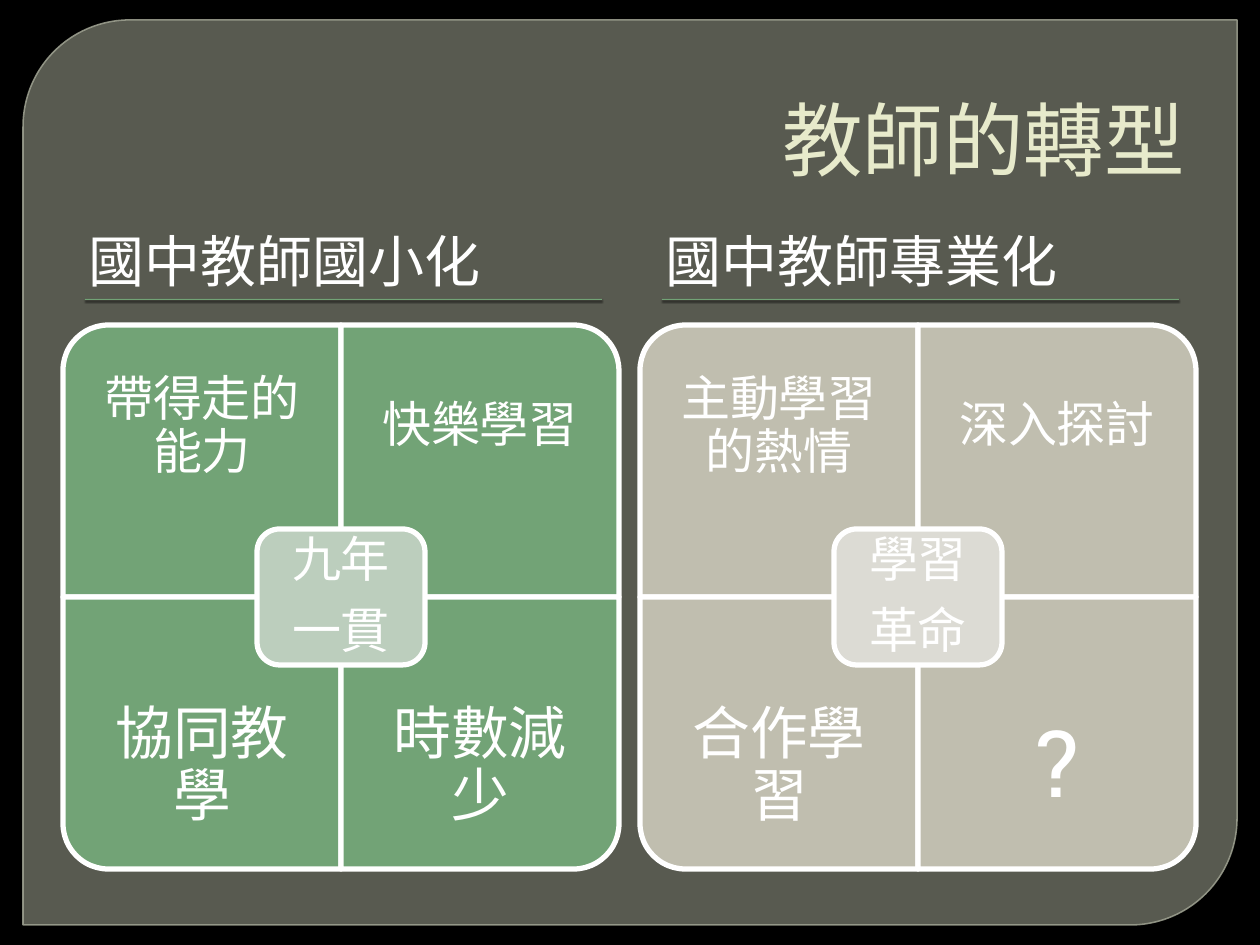
from lxml import etree
from pptx import Presentation
from pptx import util as u
from pptx.dml import color
from pptx.enum import shapes, text
from pptx.oxml import ns

SCALE = 914400 / 126
FONT = "Roboto Slab"
COLORS = {
    "back": "000000", "frame": "888B7B", "edge": "9DA090", "title": "E7EACB",
    "white": "FFFFFF", "green": "72A376", "pale_green": "BCCEBD",
    "sand": "C0BEAF", "pale_sand": "DCDBD4",
}
KIND = shapes.MSO_SHAPE
ALIGN = text.PP_ALIGN
ANCHOR = text.MSO_ANCHOR
CELL_W, CELL_H = 278, 272
HUB_W, HUB_H = 168, 136
LABEL_H = 204
TOP = 325


def px(length):
    return u.Emu(round(length * SCALE))


def rgb(name):
    return color.RGBColor.from_string(COLORS[name])


def set_alpha(fill, percent):
    tint = fill._xPr.find(".//" + ns.qn("a:srgbClr"))
    etree.SubElement(tint, ns.qn("a:alpha"), val=str(percent * 1000))


class SlideBuilder:
    def __init__(self, deck):
        self.slide = deck.slides.add_slide(deck.slide_layouts[6])
        self.slide.background.fill.solid()
        self.slide.background.fill.fore_color.rgb = rgb("back")
        self.target = self.slide.shapes

    def shape(self, kind, left, top, width, height, fill, line=None, points=3):
        item = self.target.add_shape(kind, px(left), px(top), px(width), px(height))
        item.shadow.inherit = False
        item.fill.solid()
        item.fill.fore_color.rgb = rgb(fill)
        if line:
            item.line.color.rgb = rgb(line)
            item.line.width = u.Pt(points)
        else:
            item.line.fill.background()
        return item

    def frame(self):
        item = self.shape(KIND.ROUND_2_DIAG_RECTANGLE, 23, 20, 1214, 905, "frame", "edge", 0.87)
        item.adjustments[0] = 0.118
        item.adjustments[1] = 0
        set_alpha(item.fill, 65)
        set_alpha(item.line.fill, 88)

    def rule(self, left, top, width):
        item = self.shape(KIND.RECTANGLE, left, top, width, 1, "green")
        effects = item._element.spPr.find(ns.qn("a:effectLst"))
        shadow = etree.SubElement(effects, ns.qn("a:outerShdw"), blurRad="12700",
                                  dist="12700", dir="5400000", rotWithShape="0")
        tint = etree.SubElement(shadow, ns.qn("a:srgbClr"), val=COLORS["back"])
        etree.SubElement(tint, ns.qn("a:alpha"), val="75000")

    def text(self, left, top, width, height, lines, size, fill="white", align=ALIGN.CENTER,
             anchor=ANCHOR.MIDDLE, inset=None, indent=0, spacing=None):
        box = self.target.add_textbox(px(left), px(top), px(width), px(height))
        frame = box.text_frame
        frame.word_wrap = True
        frame.vertical_anchor = anchor
        if inset is not None:
            frame.margin_left = frame.margin_right = px(inset)
            frame.margin_top = frame.margin_bottom = px(inset)
        for index, line in enumerate(lines):
            para = frame.add_paragraph() if index else frame.paragraphs[0]
            para.alignment = align
            if indent:
                para._p.get_or_add_pPr().set("marL", str(px(indent)))
            if spacing:
                para.line_spacing = spacing
                para.space_after = u.Pt(round(size * 0.35))
            span = para.add_run()
            span.text = line
            span.font.name = FONT
            span.font.size = u.Pt(size)
            span.font.color.rgb = rgb(fill)

    def label(self, left, top, width, height, lines, size, inset):
        self.text(left, top, width, height, lines, size, inset=inset, spacing=0.9)

    def matrix(self, left, fill, hub_fill, cells, hub_lines):
        self.target = self.slide.shapes.add_group_shape().shapes
        for index, (words, size, inset) in enumerate(cells):
            row, column = divmod(index, 2)
            x, y = left + column * CELL_W, TOP + row * CELL_H
            turn = (270, 0, 180, 90)[index]
            width, height = (CELL_H, CELL_W) if turn in (90, 270) else (CELL_W, CELL_H)
            cell = self.shape(KIND.ROUND_1_RECTANGLE, x + (CELL_W - width) // 2,
                              y + (CELL_H - height) // 2, width, height, fill, "white")
            cell.rotation = turn
            label_top = y + row * (CELL_H - LABEL_H)
            self.label(x, label_top, CELL_W, LABEL_H, [words], size, inset)
        x, y = left + CELL_W - HUB_W // 2, TOP + CELL_H - HUB_H // 2
        self.shape(KIND.ROUNDED_RECTANGLE, x, y, HUB_W, HUB_H, hub_fill, "white")
        self.label(x + 7, y + 7, HUB_W - 14, HUB_H - 14, hub_lines, 28, 15)
        self.target = self.slide.shapes


def main():
    deck = Presentation()
    deck.slide_width, deck.slide_height = px(1260), px(945)
    page = SlideBuilder(deck)
    page.frame()
    page.text(63, 35, 1134, 158, ["教師的轉型"], 46, "title", ALIGN.RIGHT, ANCHOR.BOTTOM, indent=8)
    panels = [
        (63, "國中教師國小化", "green", "pale_green",
         [("帶得走的能力", 28, 28), ("快樂學習", 28, 28),
          ("協同教學", 33, 33), ("時數減少", 33, 33)], ["九年", "一貫"]),
        (640, "國中教師專業化", "sand", "pale_sand",
         [("主動學習的熱情", 28, 28), ("深入探討", 28, 28),
          ("合作學習", 33, 33), ("?", 53, 52)], ["學習", "革命"]),
    ]
    for left, heading, fill, hub_fill, cells, hub_lines in panels:
        page.rule(left + 22, 299, 517)
        page.text(left, 212, 557, 88, [heading], 32, align=ALIGN.LEFT,
                  anchor=ANCHOR.BOTTOM, indent=13)
        page.matrix(left, fill, hub_fill, cells, hub_lines)
    deck.save("out.pptx")


if __name__ == "__main__":
    main()
